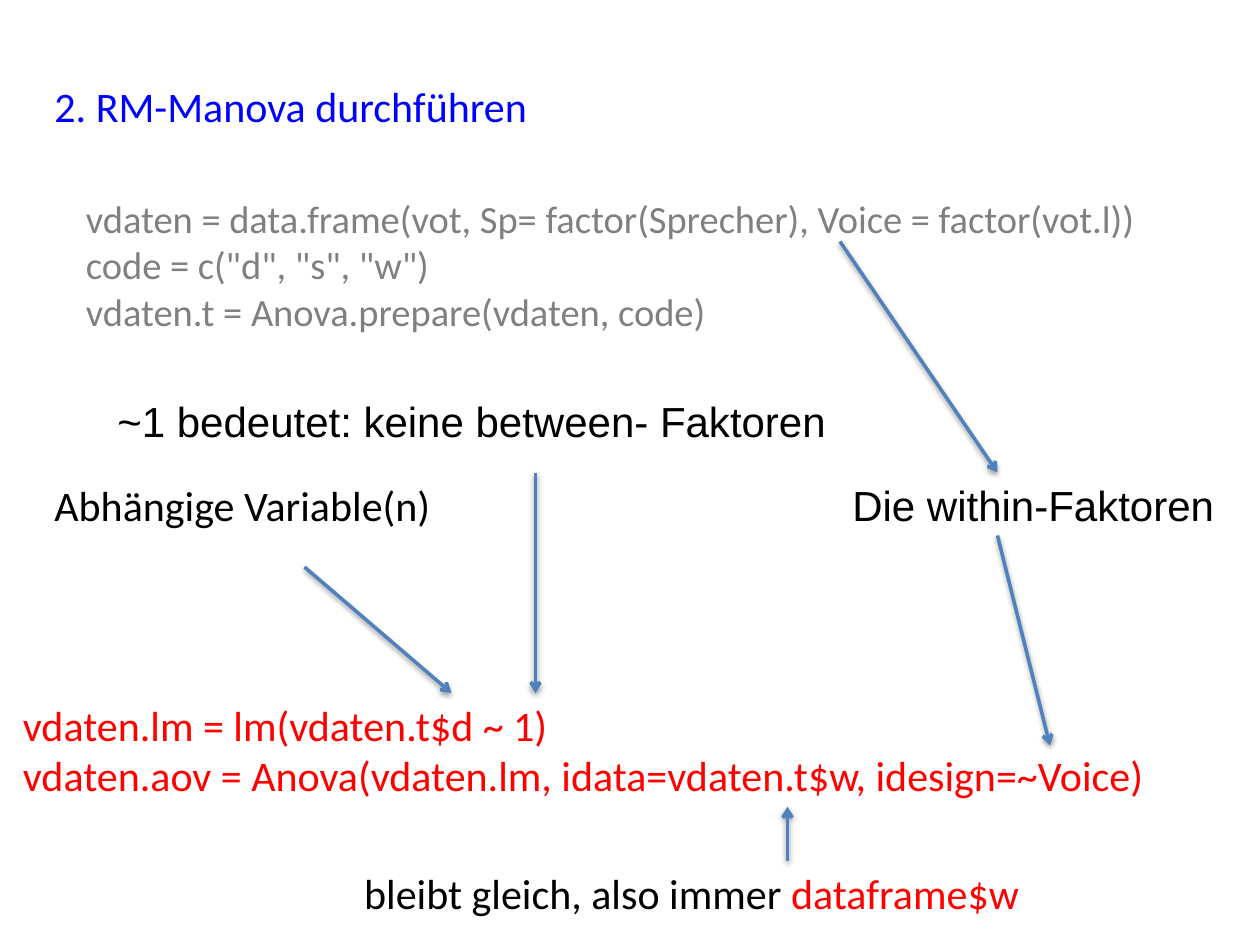
from lxml import etree
from pptx import Presentation
from pptx.dml.color import RGBColor
from pptx.enum.shapes import MSO_CONNECTOR
from pptx.enum.text import MSO_AUTO_SIZE
from pptx.oxml import parse_xml
from pptx.oxml.ns import qn
from pptx.util import Pt

STRAIGHT = MSO_CONNECTOR.STRAIGHT
FIT_SHAPE = MSO_AUTO_SIZE.SHAPE_TO_FIT_TEXT
COLORS = {
    "heading": "0000FF",
    "command": "FF0000",
    "earlier": "808080",
    "note": "000000",
    "arrow": "4F81BD",
}
SHADOW = (
    '<a:effectLst xmlns:a="http://schemas.openxmlformats.org/drawingml/2006/main">'
    '<a:outerShdw blurRad="40000" dist="20000" dir="5400000" rotWithShape="0">'
    '<a:srgbClr val="000000"><a:alpha val="38000"/></a:srgbClr>'
    "</a:outerShdw></a:effectLst>"
)


def add_text(slide, box, lines, size=24, font="Calibri"):
    """Place a text box whose lines are lists of (text, color name) runs."""
    shape = slide.shapes.add_textbox(*(Pt(value) for value in box))
    frame = shape.text_frame
    for name, value in {"word_wrap": True, "auto_size": FIT_SHAPE}.items():
        setattr(frame, name, value)
    for index, line in enumerate(lines):
        paragraph = frame.add_paragraph() if index else frame.paragraphs[0]
        for text, color in line:
            run = paragraph.add_run()
            run.text = text
            for name, value in {"size": Pt(size), "name": font}.items():
                setattr(run.font, name, value)
            run.font.color.rgb = RGBColor.from_string(COLORS[color])


def add_arrow(slide, start, end):
    """Draw a shadowed arrow from start to end."""
    connector = slide.shapes.add_connector(
        STRAIGHT, *(Pt(value) for value in (*start, *end))
    )
    connector.line.color.rgb = RGBColor.from_string(COLORS["arrow"])
    connector.line.width = Pt(2)
    properties = connector._element.spPr
    etree.SubElement(properties.find(qn("a:ln")), qn("a:tailEnd"), type="arrow")
    properties.append(parse_xml(SHADOW))


def add_code(slide, box, lines, color, size=24):
    """Place lines of code in one color."""
    add_text(slide, box, [[(line, color)] for line in lines], size)


def add_notes(slide, left, top):
    """Place the explanations relative to the given corner."""
    notes = [
        ((36, 0, 432, 36), [("~1 bedeutet: keine between- Faktoren", "note")], "Arial"),
        ((0, 48, 252, 36), [("Abhängige Variable(n)", "note")], "Calibri"),
        ((456, 48, 224, 36), [("Die within-Faktoren", "note")], "Arial"),
        (
            (177, 270, 447, 36),
            [("bleibt gleich, also immer ", "note"), ("dataframe$w", "command")],
            "Calibri",
        ),
    ]
    for (x, y, width, height), runs, font in notes:
        add_text(slide, (left + x, top + y, width, height), [runs], font=font)


def add_arrows(slide, left, top):
    """Link the explanations and the code, relative to the given corner."""
    arrows = [
        ((306, 0), (396, 132)),
        ((396, 168), (426, 288)),
        ((132, 132), (132, 258)),
        ((0, 186), (84, 258)),
        ((276, 354), (276, 323)),
    ]
    for ends in arrows:
        add_arrow(slide, *((left + x, top + y) for x, y in ends))


def main():
    """Build and save the slide."""
    presentation = Presentation()
    presentation.slide_width, presentation.slide_height = Pt(720), Pt(540)
    slide = presentation.slides.add_slide(presentation.slide_layouts[6])
    add_text(slide, (24, 42.5, 312, 36), [[("2. RM-Manova durchführen", "heading")]])
    add_code(
        slide,
        (42, 108, 624, 87),
        [
            "vdaten = data.frame(vot, Sp= factor(Sprecher), Voice = factor(vot.l))",
            'code = c("d", "s", "w")',
            "vdaten.t = Anova.prepare(vdaten, code)",
        ],
        "earlier",
        22,
    )
    add_code(
        slide,
        (6, 396, 696, 65.5),
        [
            "vdaten.lm = lm(vdaten.t$d ~ 1)",
            "vdaten.aov = Anova(vdaten.lm, idata=vdaten.t$w, idesign=~Voice)",
        ],
        "command",
    )
    add_notes(slide, 24, 222.25)
    add_arrows(slide, 174, 138)
    presentation.save("out.pptx")


if __name__ == "__main__":
    main()
